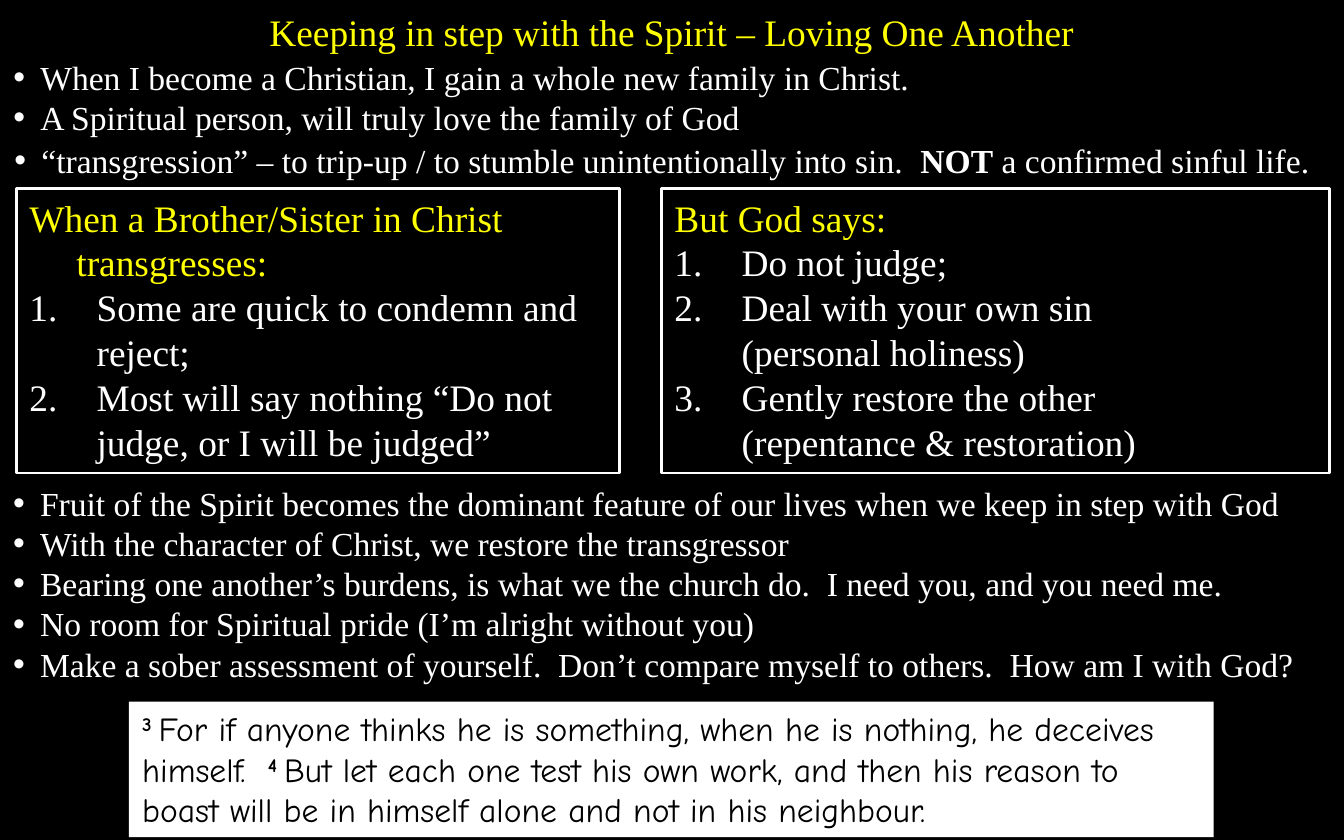
from dataclasses import dataclass

from lxml import etree
from pptx import Presentation
from pptx.dml.color import RGBColor
from pptx.enum import shapes, text
from pptx.oxml import ns
from pptx.util import Inches, Pt


@dataclass(frozen=True)
class Theme:
    background: RGBColor = RGBColor(0, 0, 0)
    body: RGBColor = RGBColor(255, 255, 255)
    accent: RGBColor = RGBColor(255, 255, 0)
    ink: RGBColor = RGBColor(0, 0, 0)
    heading_size: int = 20
    body_size: int = 18
    border_width: float = 1.5
    font: str = "Times New Roman"
    verse_font: str = "Comic Neue"


THEME = Theme()
HEADING = dict(name=THEME.font, size=Pt(THEME.heading_size), color=THEME.accent)
ITEM = HEADING | dict(color=THEME.body)
BULLET = ITEM | dict(size=Pt(THEME.body_size))
VERSE = dict(name=THEME.verse_font, size=Pt(THEME.body_size), color=THEME.ink)

FAMILY = [
    "When I become a Christian, I gain a whole new family in Christ.",
    "A Spiritual person, will truly love the family of God",
]
TRANSGRESSION = [[
    ("“transgression” – to trip-up / to stumble unintentionally into sin.  ", {}),
    ("NOT", {"bold": True}),
    (" a confirmed sinful life.", {}),
]]
FRUIT = [
    "Fruit of the Spirit becomes the dominant feature of our lives when we keep in step with God",
    "With the character of Christ, we restore the transgressor",
    "Bearing one another’s burdens, is what we the church do.  I need you, and you need me.",
    "No room for Spiritual pride (I’m alright without you)",
    "Make a sober assessment of yourself.  Don’t compare myself to others.  How am I with God?",
]
PANELS = [
    (0.12, 4.49, "When a Brother/Sister in Christ transgresses:", [
        "Some are quick to condemn and reject;",
        "Most will say nothing “Do not judge, or I will be judged”",
    ]),
    (4.92, 4.97, "But God says:", [
        "Do not judge;",
        "Deal with your own sin\n(personal holiness)",
        "Gently restore the other \n(repentance & restoration)",
    ]),
]
VERSES = [
    ("3", "For if anyone thinks he is something, when he is nothing, he deceives himself.  "),
    ("4", "But let each one test his own work, and then his reason to boast "
          "will be in himself alone and not in his neighbour."),
]


def place(shape, box):
    for name, value in zip(("left", "top", "width", "height"), box):
        setattr(shape, name, Inches(value))
    settings = dict(word_wrap=True, auto_size=text.MSO_AUTO_SIZE.SHAPE_TO_FIT_TEXT,
                    vertical_anchor=text.MSO_ANCHOR.TOP,
                    margin_left=Inches(0.1), margin_right=Inches(0.1),
                    margin_top=Inches(0.05), margin_bottom=Inches(0.05))
    for name, value in settings.items():
        setattr(shape.text_frame, name, value)
    return shape


def add_run(paragraph, content, style):
    for index, line in enumerate(content.split("\n")):
        if index:
            paragraph.add_line_break()
        run = paragraph.add_run()
        run.text = line
        for name, value in style.items():
            if name == "color":
                run.font.color.rgb = value
            elif name == "baseline":
                run.font._element.set("baseline", str(value))
            else:
                setattr(run.font, name, value)


def add_paragraph(frame, runs, style, hanging=0, marker=None,
                  alignment=text.PP_ALIGN.LEFT):
    first = frame.paragraphs[0]
    paragraph = frame.add_paragraph() if first.runs else first
    paragraph.alignment = alignment
    paragraph.space_before = Pt(0)
    properties = paragraph._p.get_or_add_pPr()
    properties.set("marL", str(Inches(hanging)))
    properties.set("indent", str(-Inches(hanging)))
    if marker == "•":
        etree.SubElement(properties, ns.qn("a:buFont"), typeface="Arial")
        etree.SubElement(properties, ns.qn("a:buChar"), char=marker)
    elif marker:
        etree.SubElement(properties, ns.qn("a:buFont"), typeface="+mj-lt")
        etree.SubElement(properties, ns.qn("a:buAutoNum"), type=marker)
    if isinstance(runs, str):
        runs = [(runs, {})]
    for content, changes in runs:
        add_run(paragraph, content, style | changes)


def fill_bullets(shape, box, items):
    place(shape, box)
    for item in items:
        add_paragraph(shape.text_frame, item, BULLET, 0.2, "•")


def add_bullets(slide, box, items):
    fill_bullets(slide.shapes.add_textbox(0, 0, 0, 0), box, items)


def add_box(slide, box, fill=None, border=None):
    shape = place(slide.shapes.add_shape(shapes.MSO_SHAPE.RECTANGLE, 0, 0, 0, 0), box)
    shape.shadow.inherit = False
    if fill is None:
        shape.fill.background()
    else:
        shape.fill.solid()
        shape.fill.fore_color.rgb = fill
    if border is None:
        shape.line.fill.background()
    else:
        shape.line.color.rgb = border
        shape.line.width = Pt(THEME.border_width)
    return shape.text_frame


def add_panel(slide, left, width, heading, items):
    frame = add_box(slide, (left, 1.4, width, 2.12), border=THEME.body)
    add_paragraph(frame, heading, HEADING, 0.35)
    for item in items:
        add_paragraph(frame, item, ITEM, 0.5, "arabicPeriod")


def add_verses(slide):
    frame = add_box(slide, (0.96, 5.22, 8.07, 1.01), fill=THEME.body)
    runs = []
    for number, words in VERSES:
        runs += [(number + " ", {"bold": True, "baseline": 30000}), (words, {})]
    add_paragraph(frame, runs, VERSE)


def main():
    presentation = Presentation()
    presentation.slide_width = Inches(10)
    presentation.slide_height = Inches(6.25)
    slide = presentation.slides.add_slide(presentation.slide_layouts[1])
    slide.background.fill.solid()
    slide.background.fill.fore_color.rgb = THEME.background

    title = place(slide.shapes.title, (0, 0.02, 10, 0.44))
    add_paragraph(title.text_frame, "Keeping in step with the Spirit – Loving One Another",
                  HEADING, 0.35, alignment=text.PP_ALIGN.CENTER)
    fill_bullets(slide.placeholders[1], (0, 0.37, 10, 0.71), FAMILY)
    add_bullets(slide, (0.01, 0.99, 10, 0.4), TRANSGRESSION)
    for panel in PANELS:
        add_panel(slide, *panel)
    add_verses(slide)
    add_bullets(slide, (0, 3.54, 10, 1.62), FRUIT)
    presentation.save("out.pptx")


if __name__ == "__main__":
    main()
